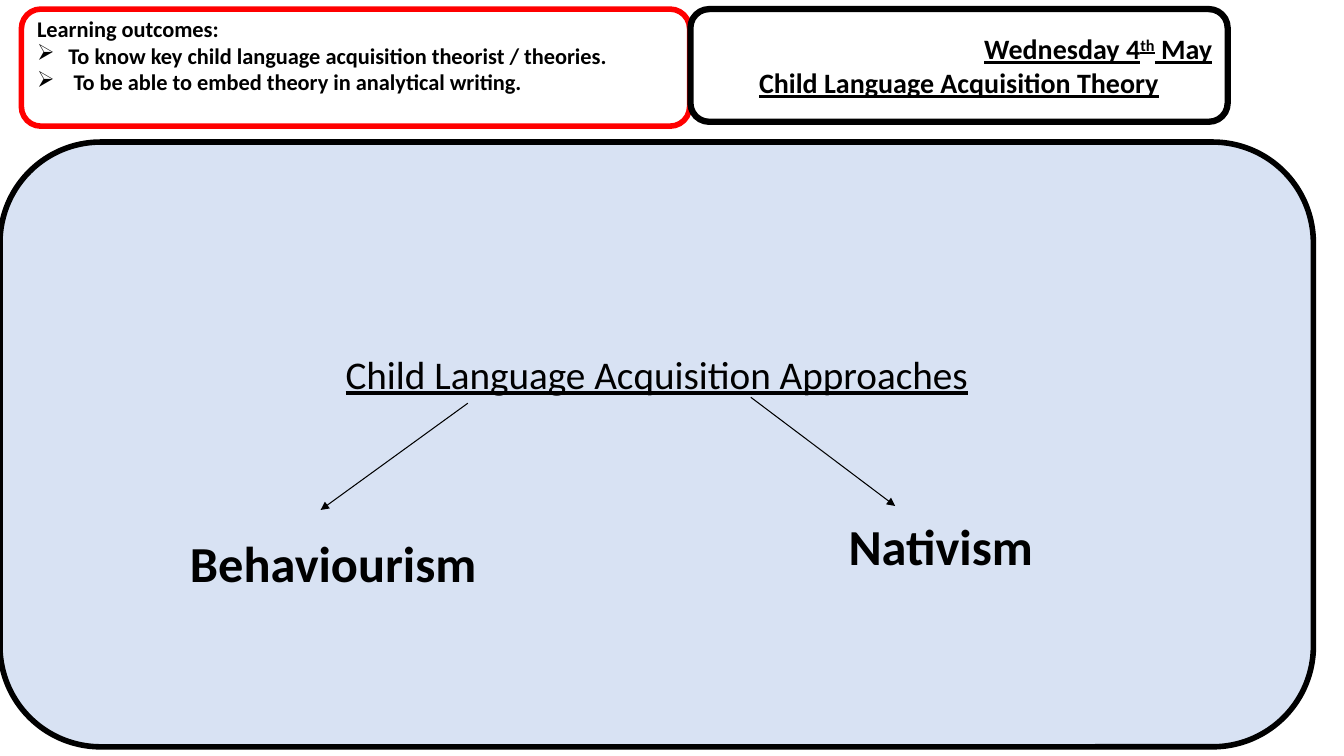
from lxml import etree
from pptx import Presentation
from pptx.dml.color import RGBColor
from pptx.enum.shapes import MSO_CONNECTOR, MSO_SHAPE
from pptx.enum.text import MSO_ANCHOR, PP_ALIGN
from pptx.oxml.ns import qn
from pptx.util import Cm, Pt

ROUNDED = MSO_SHAPE.ROUNDED_RECTANGLE
STRAIGHT = MSO_CONNECTOR.STRAIGHT
TOP, MIDDLE = MSO_ANCHOR.TOP, MSO_ANCHOR.MIDDLE
LEFT, CENTER, RIGHT = PP_ALIGN.LEFT, PP_ALIGN.CENTER, PP_ALIGN.RIGHT

THEME = {
    "font": "Calibri",
    "black": RGBColor(0x00, 0x00, 0x00),
    "white": RGBColor(0xFF, 0xFF, 0xFF),
    "red": RGBColor(0xFF, 0x00, 0x00),
    "pale blue": RGBColor(0xD8, 0xE2, 0xF3),
    "outcome": {"size": Pt(16), "bold": True},
    "heading": {"size": Pt(20), "bold": True, "underline": True},
    "topic": {"size": Pt(28), "underline": True},
    "approach": {"size": Pt(36), "bold": True},
}


def add_run(paragraph, text, style):
    run = paragraph.add_run()
    run.text = text
    run.font.name = THEME["font"]
    run.font.color.rgb = THEME["black"]
    for name, value in THEME[style].items():
        setattr(run.font, name, value)
    return run


def add_box(left, top, width, height, fill, line, line_width, frame_format):
    """Add a rounded box and return its text frame."""
    shape = slide.shapes.add_shape(ROUNDED, Cm(left), Cm(top), Cm(width), Cm(height))
    shape.shadow.inherit = False
    shape.fill.solid()
    shape.fill.fore_color.rgb = THEME[fill]
    shape.line.color.rgb = THEME[line]
    shape.line.width = Pt(line_width)
    for name, value in frame_format.items():
        setattr(shape.text_frame, name, value)
    return shape.text_frame


presentation = Presentation()
presentation.slide_width = Cm(33.87)
presentation.slide_height = Cm(19.05)
slide = presentation.slides.add_slide(presentation.slide_layouts[6])

# Main panel, with its topic line raised above the centre
panel = add_box(0, 3.58, 33.1, 15.24, "pale blue", "black", 4,
                {"vertical_anchor": MIDDLE, "margin_bottom": Cm(3.7), "word_wrap": True})
panel.paragraphs[0].alignment = CENTER
add_run(panel.paragraphs[0], "Child Language Acquisition Approaches", "topic")

# Learning outcomes
outcomes = add_box(0.54, 0.23, 16.84, 2.95, "white", "red", 4,
                   {"vertical_anchor": TOP, "margin_top": 0, "word_wrap": True})
outcomes.paragraphs[0].alignment = LEFT
add_run(outcomes.paragraphs[0], "Learning outcomes:", "outcome")
for text, indent in (
    ("To know key child language acquisition theorist / theories.", 0.79),
    ("To be able to embed theory in analytical writing.", 0.92),
):
    paragraph = outcomes.add_paragraph()
    paragraph.alignment = LEFT
    add_run(paragraph, text, "outcome")
    properties = paragraph._p.get_or_add_pPr()
    properties.set("marL", str(Cm(indent)))
    properties.set("indent", str(-Cm(indent)))
    # In the Wingdings symbol set, Ø is the arrowhead bullet
    etree.SubElement(properties, qn("a:buFont"), typeface="Wingdings",
                     pitchFamily="2", charset="2")
    etree.SubElement(properties, qn("a:buChar"), char="Ø")

# Date and lesson title
heading = add_box(17.4, 0.23, 13.54, 2.84, "white", "black", 4.5,
                  {"vertical_anchor": MIDDLE, "word_wrap": True})
date = heading.paragraphs[0]
date.alignment = RIGHT
add_run(date, "Wednesday 4", "heading")
ordinal = add_run(date, "th", "heading")
ordinal._r.get_or_add_rPr().set("baseline", "30000")
add_run(date, " May", "heading")
title = heading.add_paragraph()
title.alignment = CENTER
add_run(title, "Child Language Acquisition Theory", "heading")

# Arrows from the topic to each approach
for start_x, start_y, end_x, end_y in (
    (11.79, 10.16, 8.08, 12.85),
    (18.92, 10.01, 22.56, 12.75),
):
    arrow = slide.shapes.add_connector(
        STRAIGHT, Cm(start_x), Cm(start_y), Cm(end_x), Cm(end_y))
    arrow.line.color.rgb = THEME["black"]
    arrow.line.width = Pt(0.75)
    etree.SubElement(arrow.line._get_or_add_ln(), qn("a:tailEnd"), type="triangle")
    etree.SubElement(arrow._element.spPr, qn("a:effectLst"))

for name, left, top in (("Behaviourism", 3.61, 13.28), ("Nativism", 18.92, 12.85)):
    label = slide.shapes.add_textbox(Cm(left), Cm(top), Cm(9.58), Cm(1.8))
    label.text_frame.word_wrap = True
    label.text_frame.paragraphs[0].alignment = CENTER
    add_run(label.text_frame.paragraphs[0], name, "approach")

presentation.save("out.pptx")
